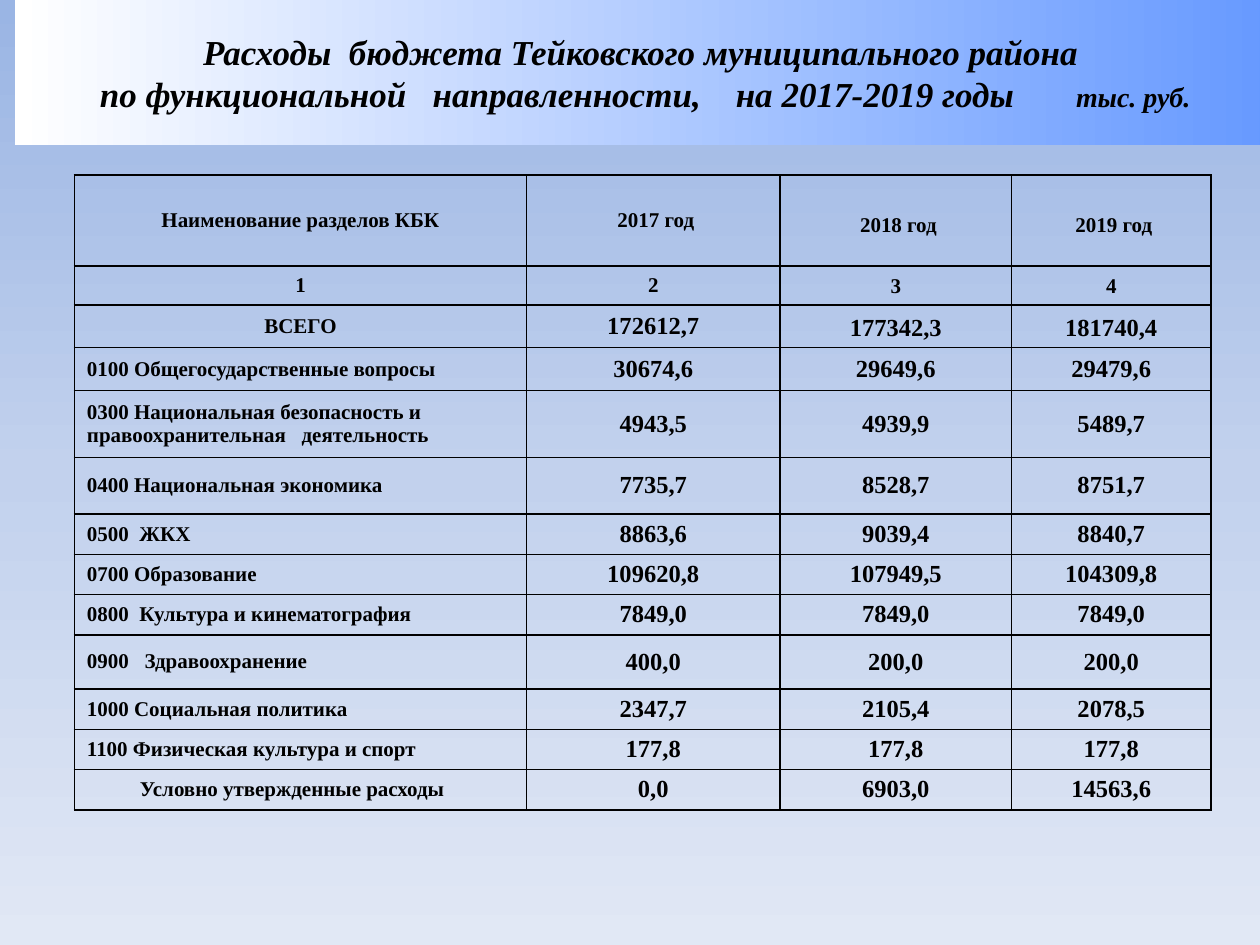
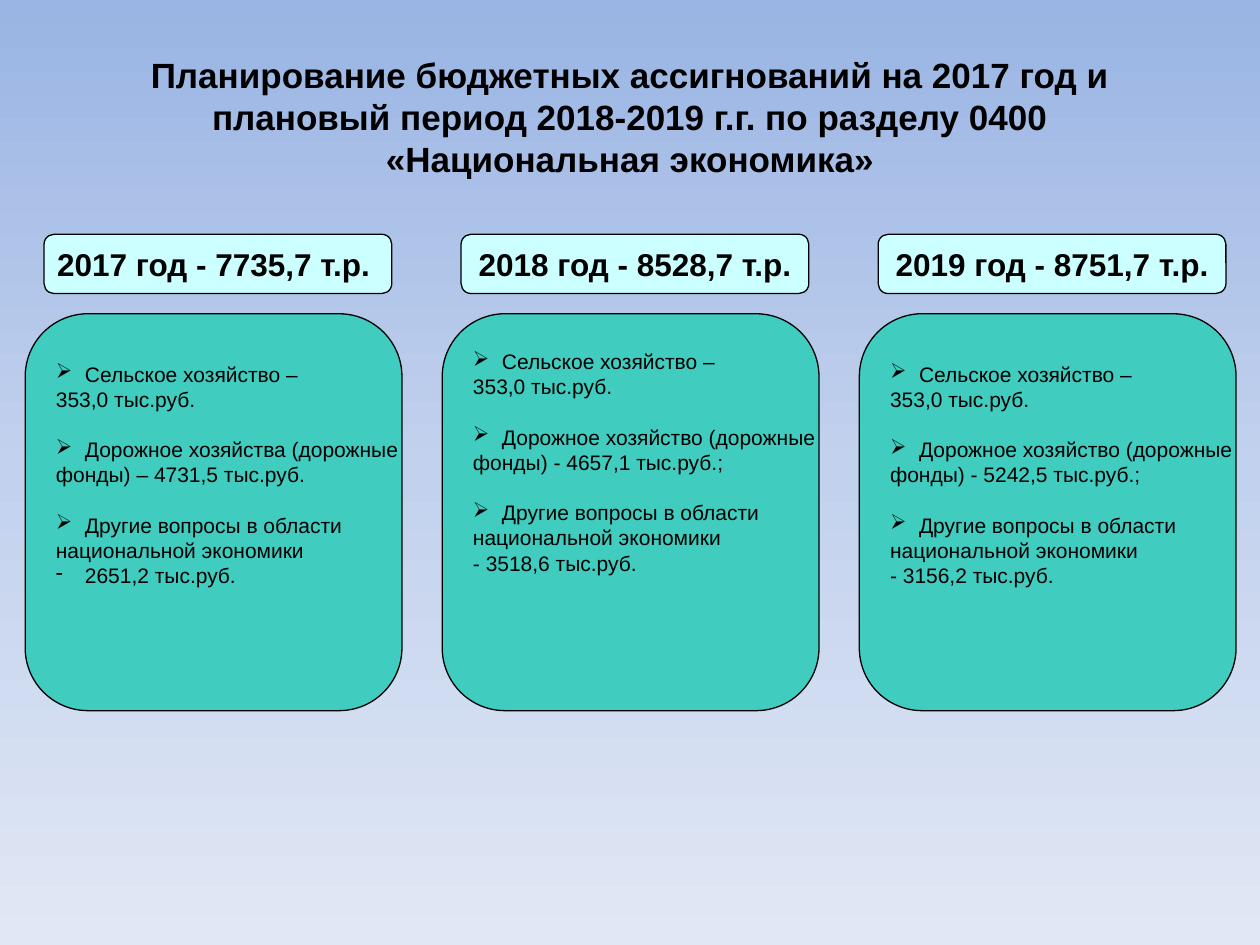
from pptx import Presentation
from pptx.dml.color import RGBColor
from pptx.enum.shapes import MSO_SHAPE as Shape
from pptx.enum.text import MSO_ANCHOR as Anchor, MSO_AUTO_SIZE as Auto, PP_ALIGN as Align
from pptx.oxml import parse_xml
from pptx.oxml.ns import nsdecls, qn
from pptx.util import Inches, Pt
from copy import deepcopy

BLACK, PALE, TEAL = "000000", "CCFFFF", "40CCBF"
SKY = ("9AB5E4", "C2D1ED", "E1E8F5")
BAND = ("FFFFFF", "6699FF")
SERIF, SANS = "Times New Roman", "Arial"

HEAD = ("Расходы  бюджета Тейковского муниципального района ",
        "по функциональной   направленности,    на 2017-2019 годы")
UNIT = "тыс. руб."
COLS = (3.59, 2.01, 1.84, 1.58)
ROWS = [
    (0.72, "Наименование разделов КБК", " 2017 год", " 2018 год", " 2019 год"),
    (0.31, "1", "2", "3", "4"),
    (0.34, "ВСЕГО", "172612,7", "177342,3", "181740,4"),
    (0.34, "0100 Общегосударственные вопросы", "30674,6", "29649,6", "29479,6"),
    (0.53, "0300 Национальная безопасность и правоохранительная   деятельность",
     "4943,5", "4939,9", "5489,7"),
    (0.45, "0400 Национальная экономика", "7735,7", "8528,7", "8751,7"),
    (0.32, "0500  ЖКХ", "8863,6", "9039,4", "8840,7"),
    (0.32, "0700 Образование", "109620,8", "107949,5", "104309,8"),
    (0.32, "0800  Культура и кинематография", "7849,0", "7849,0", "7849,0"),
    (0.43, "0900   Здравоохранение", "400,0", "200,0", "200,0"),
    (0.32, "1000 Социальная политика", "2347,7", "2105,4", "2078,5"),
    (0.32, "1100 Физическая культура и спорт", "177,8", "177,8", "177,8"),
    (0.32, "Условно утвержденные расходы", "0,0", "6903,0", "14563,6"),
]

PLAN = ("Планирование бюджетных ассигнований на 2017 год и плановый период "
        "2018-2019 г.г. по разделу 0400 «Национальная экономика»")
FARM = ("➢", "Сельское хозяйство –")
SUM = ("", "353,0 тыс.руб.")
ROAD = ("➢", "Дорожное хозяйство (дорожные")
REST = [("➢", "Другие вопросы в области"), ("", "национальной экономики")]
YEARS = [
    ("2017 год - 7735,7 т.р. ", 0.23,
     [FARM, SUM, ("➢", "Дорожное хозяйства (дорожные"),
      ("", "фонды) – 4731,5 тыс.руб."), *REST, ("-", "2651,2 тыс.руб.")]),
    ("2018 год - 8528,7 т.р.", 0.13,
     [FARM, SUM, ROAD, ("", "фонды) - 4657,1 тыс.руб.;"), *REST,
      ("", "- 3518,6 тыс.руб.")]),
    ("2019 год - 8751,7 т.р.", 0.23,
     [FARM, SUM, ROAD, ("", "фонды) - 5242,5 тыс.руб.;"), *REST,
      ("", "- 3156,2 тыс.руб.")]),
]


def color(code):
    return RGBColor.from_string(code)


def blend(fill, root, angle, codes):
    fill.gradient()
    fill.gradient_angle = angle
    stops = next(root.iter(qn("a:gsLst")))
    while len(stops) < len(codes):
        stops.append(deepcopy(stops[-1]))
    for i, (stop, code) in enumerate(zip(fill.gradient_stops, codes)):
        stop.position = i / (len(codes) - 1)
        stop.color.rgb = color(code)


def style(para, size, face, bold=False, italic=False, align=Align.CENTER):
    para.alignment = align
    font = para.font
    font.size, font.name = Pt(size), face
    font.bold, font.italic = bold, italic
    font.color.rgb = color(BLACK)


def place(shape, left, top, width, height):
    shape.left, shape.top = Inches(left), Inches(top)
    shape.width, shape.height = Inches(width), Inches(height)


def title(slide, box, lines, face, italic=False):
    shape = slide.shapes.title
    place(shape, *box)
    frame = shape.text_frame
    frame.text = "\n".join(lines)
    frame.auto_size = Auto.NONE
    frame.word_wrap = True
    frame.vertical_anchor = Anchor.MIDDLE
    for para in frame.paragraphs:
        style(para, 20, face, True, italic)
    return shape


def border(cell):
    props = cell._tc.get_or_add_tcPr()
    for side in "LRTB":
        props.append(parse_xml(
            f'<a:ln{side} {nsdecls("a")} w="12700"><a:solidFill>'
            f'<a:srgbClr val="{BLACK}"/></a:solidFill></a:ln{side}>'))


def grid(slide):
    frame = slide.shapes.add_table(
        len(ROWS), len(COLS), Inches(0.59), Inches(1.39),
        Inches(sum(COLS)), Inches(sum(row[0] for row in ROWS)))
    table = frame.table
    table.first_row = table.horz_banding = False
    for col, width in zip(table.columns, COLS):
        col.width = Inches(width)
    for r, (height, *texts) in enumerate(ROWS):
        table.rows[r].height = Inches(height)
        for c, text in enumerate(texts):
            cell = table.cell(r, c)
            border(cell)
            cell.fill.background()
            cell.text = text
            tight = r > 2 and c > 0
            low = r < 3 and c > 1
            cell.margin_left = cell.margin_right = Inches(0.08 if tight else 0.1)
            cell.margin_top = cell.margin_bottom = Inches(0 if tight else 0.05)
            cell.vertical_anchor = Anchor.BOTTOM if low else Anchor.MIDDLE
            if low and r == 0:
                cell.margin_bottom = Inches(0.23)
            style(cell.text_frame.paragraphs[0], 14 if r > 1 and c else 12, SERIF,
                  True, align=Align.LEFT if r > 2 and c == 0 else Align.CENTER)
    table.cell(len(ROWS) - 1, 0).margin_left = Inches(0.52)


def panel(slide, box, code):
    shape = slide.shapes.add_shape(Shape.ROUNDED_RECTANGLE, *map(Inches, box))
    shape.shadow.inherit = False
    shape.fill.solid()
    shape.fill.fore_color.rgb = color(code)
    shape.line.color.rgb = color(BLACK)
    shape.line.width = Pt(0.75)
    shape.text_frame.word_wrap = False
    return shape.text_frame


def bullet(para, mark):
    props = para._p.get_or_add_pPr()
    props.set("marL", str(Inches(0.23)))
    props.set("indent", str(-Inches(0.23)))
    props.find(qn("a:defRPr")).addprevious(
        parse_xml(f'<a:buChar {nsdecls("a")} char="{mark}"/>'))


def card(slide, left, head, inset, items):
    frame = panel(slide, (left + 0.15, 1.86, 2.76, 0.47), PALE)
    frame.text = head
    frame.vertical_anchor = Anchor.MIDDLE
    style(frame.paragraphs[0], 18, SANS, True)

    frame = panel(slide, (left, 2.49, 2.99, 3.15), TEAL)
    frame.vertical_anchor = Anchor.TOP
    frame.margin_top = Inches(inset)
    frame.text = "\n".join(text for _, text in items)
    for i, (para, (mark, _)) in enumerate(zip(frame.paragraphs, items)):
        style(para, 12, SANS, align=Align.LEFT)
        if mark:
            bullet(para, mark)
        if i and mark == "➢":
            para.space_before = Pt(14.4)


def budget(slide):
    band = title(slide, (0.12, 0, 10, 1.15), HEAD, SERIF, True)
    blend(band.fill, band.element, 0, BAND)
    para = band.text_frame.paragraphs[-1]
    gap = para.add_run()
    gap.text = " "
    gap._r.get_or_add_rPr().set("spc", "3000")
    unit = para.add_run()
    unit.text = UNIT
    unit.font.size = Pt(16)
    grid(slide)


def economy(slide):
    title(slide, (0.5, 0.3, 9, 1.25), [PLAN], SANS)
    for i, year in enumerate(YEARS):
        card(slide, 0.2 + 3.31 * i, *year)


def main():
    deck = Presentation()
    deck.slide_width, deck.slide_height = Inches(10), Inches(7.5)
    master = deck.slide_master
    blend(master.background.fill, master.element, 270, SKY)
    for build in (budget, economy):
        build(deck.slides.add_slide(deck.slide_layouts[5]))
    deck.save("out.pptx")


if __name__ == "__main__":
    main()
